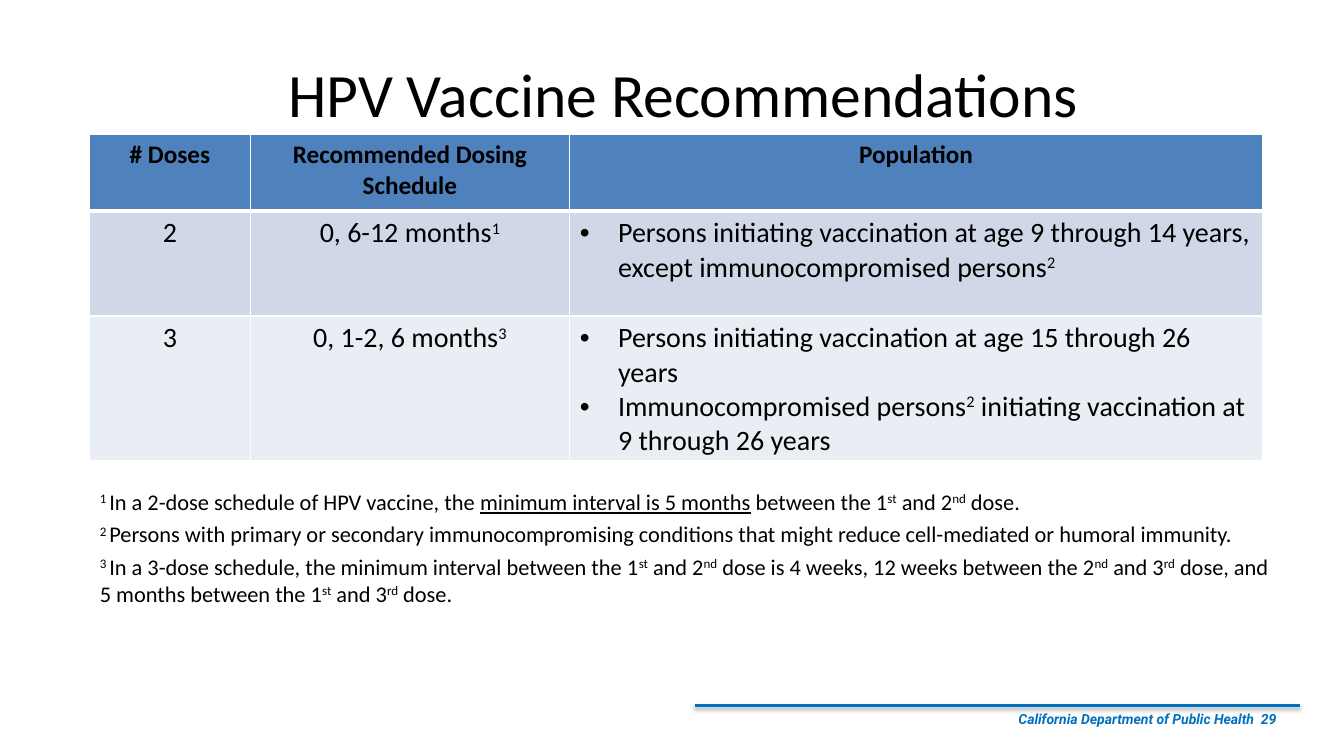
import lxml.etree
import pptx
import pptx.dml.color
import pptx.enum.shapes
import pptx.enum.text
import pptx.oxml.ns
import pptx.util

ALIGN = pptx.enum.text.PP_ALIGN
ANCHOR = pptx.enum.text.MSO_ANCHOR
BLACK, WHITE, BLUE = "000000", "FFFFFF", "0070C0"
HEADER_FILL, BAND_FILLS = "4F81BD", ("D0D8E8", "E9EDF4")

# In texts, ^...^ marks superscript, _..._ marks underline
HEADERS = ["# Doses", "Recommended Dosing Schedule", "Population"]
DOSES = [
    ["2", "0, 6-12 months^1^",
     ["Persons initiating vaccination at age 9 through 14 years, "
      "except immunocompromised persons^2^"]],
    ["3", "0, 1-2, 6 months^3^",
     ["Persons initiating vaccination at age 15 through 26 years",
      "Immunocompromised persons^2^ initiating vaccination at 9 through 26 years"]],
]
FOOTNOTES = [
    "^1 ^In a 2-dose schedule of HPV vaccine, the _minimum interval is 5 months_ "
    "between the 1^st^ and 2^nd^ dose.",
    "^2 ^Persons with primary or secondary immunocompromising conditions that "
    "might reduce cell-mediated or humoral immunity.",
    "^3 ^In a 3-dose schedule, the minimum interval between the 1^st^ and 2^nd^ "
    "dose is 4 weeks, 12 weeks between the 2^nd^ and 3^rd^ dose, and 5 months "
    "between the 1^st^ and 3^rd^ dose.",
]


def color(value):
    return pptx.dml.color.RGBColor.from_string(value)


def add_xml(parent, tag, **attributes):
    child = lxml.etree.SubElement(parent, pptx.oxml.ns.qn(tag))
    for name, value in attributes.items():
        child.set(name, str(value))
    return child


class SlideBuilder:
    """Holds the style and the slide; lengths are percentages of the slide."""
    font = "Calibri"

    def __init__(self, deck):
        self.deck = deck
        self.page = deck.slides.add_slide(deck.slide_layouts[1])

    def across(self, share):
        return round(self.deck.slide_width * share / 100)

    def down(self, share):
        return round(self.deck.slide_height * share / 100)

    def area(self, left, top, width, height):
        return self.across(left), self.down(top), self.across(width), self.down(height)

    def fill_paragraph(self, para, text, size, bold=False, align=None):
        para.alignment = align
        for piece_index, piece in enumerate(text.split("^")):
            for part_index, part in enumerate(piece.split("_")):
                if not part:
                    continue
                span = para.add_run()
                span.text = part
                span.font.name = self.font
                span.font.size = pptx.util.Pt(size)
                span.font.bold = bold
                span.font.color.rgb = color(BLACK)
                if part_index % 2:
                    span.font.underline = True
                if piece_index % 2:
                    span._r.get_or_add_rPr().set("baseline", "30000")

    def place(self, box, area):
        box.left, box.top, box.width, box.height = self.area(*area)
        box.text_frame.auto_size = pptx.enum.text.MSO_AUTO_SIZE.NONE
        return box.text_frame

    def title(self, text, area):
        frame = self.place(self.page.shapes.title, area)
        frame.vertical_anchor = ANCHOR.MIDDLE
        self.fill_paragraph(frame.paragraphs[0], text, 44, align=ALIGN.CENTER)

    def body(self, texts, area):
        frame = self.place(self.page.placeholders[1], area)
        for index, text in enumerate(texts):
            para = frame.add_paragraph() if index else frame.paragraphs[0]
            properties = para._p.get_or_add_pPr()
            properties.set("marL", "0")
            properties.set("indent", "0")
            add_xml(properties, "a:buNone")
            para.space_before = pptx.util.Pt(0)
            para.space_after = pptx.util.Pt(4)
            self.fill_paragraph(para, text, 16)

    def border(self, cell, side, points):
        line = add_xml(cell._tc.get_or_add_tcPr(), "a:ln" + side, w=pptx.util.Pt(points))
        add_xml(add_xml(line, "a:solidFill"), "a:srgbClr", val=WHITE)

    def cell(self, cell, content, fill, size, bold, top, bottom):
        for side, points in zip("LRTB", (1, 1, top, bottom)):
            self.border(cell, side, points)
        cell.fill.solid()
        cell.fill.fore_color.rgb = color(fill)
        frame = cell.text_frame
        if isinstance(content, str):
            self.fill_paragraph(frame.paragraphs[0], content, size, bold, ALIGN.CENTER)
            return
        hang = pptx.util.Inches(0.38)
        for index, text in enumerate(content):
            para = frame.add_paragraph() if index else frame.paragraphs[0]
            properties = para._p.get_or_add_pPr()
            properties.set("marL", str(hang))
            properties.set("indent", str(-hang))
            add_xml(properties, "a:buFont", typeface="Arial")
            add_xml(properties, "a:buChar", char="•")
            self.fill_paragraph(para, text, size, bold)

    def table(self, headers, rows, left, top, widths, heights):
        area = self.area(left, top, sum(widths), sum(heights))
        table = self.page.shapes.add_table(len(heights), len(widths), *area).table
        table.horz_banding = False
        for column, width in zip(table.columns, widths):
            column.width = self.across(width)
        for row, height in zip(table.rows, heights):
            row.height = self.down(height)
        for row_index, contents in enumerate([headers] + rows):
            header = row_index == 0
            fill = HEADER_FILL if header else BAND_FILLS[(row_index - 1) % 2]
            for column_index, content in enumerate(contents):
                self.cell(table.cell(row_index, column_index), content, fill,
                          18 if header else 20, header,
                          top=3 if row_index == 1 else 1, bottom=3 if header else 1)

    def footer(self, text, area):
        box = self.page.shapes.add_textbox(*self.area(*area))
        frame = box.text_frame
        frame.word_wrap = True
        frame.vertical_anchor = ANCHOR.MIDDLE
        frame.margin_right = pptx.util.Inches(0.23)
        frame.text = text
        para = frame.paragraphs[0]
        para.alignment = ALIGN.RIGHT
        font = para.runs[0].font
        font.name, font.size = "Roboto", pptx.util.Pt(10)
        font.bold = font.italic = True
        font.color.rgb = color(BLUE)

    def rule(self, left, top, width):
        start, level, length, _ = self.area(left, top, width, 0)
        line = self.page.shapes.add_connector(
            pptx.enum.shapes.MSO_CONNECTOR.STRAIGHT, start, level, start + length, level)
        line.line.color.rgb = color(BLUE)
        line.line.width = pptx.util.Pt(2)
        effects = add_xml(line._element.spPr, "a:effectLst")
        shadow = add_xml(effects, "a:outerShdw", blurRad=pptx.util.Pt(3.1),
                         dist=pptx.util.Pt(1.6), dir=90 * 60000, rotWithShape=0)
        add_xml(add_xml(shadow, "a:srgbClr", val=BLACK), "a:alpha", val=38000)


def main():
    deck = pptx.Presentation()
    deck.slide_width = pptx.util.Inches(13.33)
    deck.slide_height = pptx.util.Inches(7.5)
    builder = SlideBuilder(deck)
    left = 6.68

    # Footer band
    builder.footer("California Department of Public Health  29", (51.69, 92.4, 45, 5.33))
    builder.rule(51.69, 93.33, 45)

    # Title and footnotes
    builder.title("HPV Vaccine Recommendations", (left, 4, 88.37, 16.67))
    builder.body(FOOTNOTES, (left, 63.87, 89.42, 25.6))

    # Dosing table
    builder.table(HEADERS, DOSES, left, 17.8,
                  widths=(11.93, 23.78, 51.54), heights=(10.13, 13.87, 18.8))
    deck.save("out.pptx")


if __name__ == "__main__":
    main()
